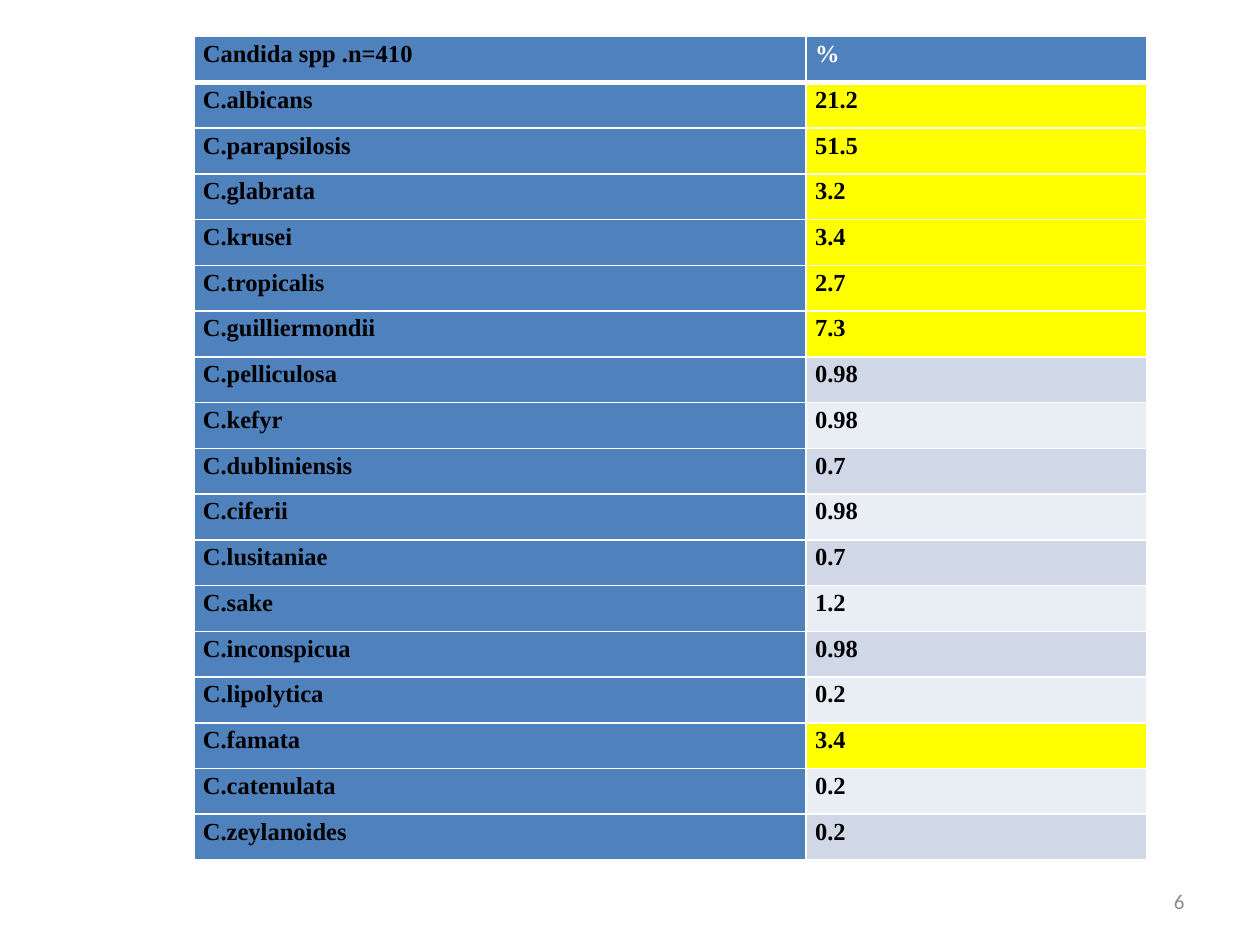
from dataclasses import dataclass

from lxml import etree
from pptx import Presentation
from pptx.dml.color import RGBColor
from pptx.enum.text import MSO_ANCHOR, PP_ALIGN
from pptx.oxml.ns import qn
from pptx.util import Cm, Pt

MIDDLE = MSO_ANCHOR.MIDDLE
RIGHT = PP_ALIGN.RIGHT

# Content
HEADER = ("Candida spp .n=410", "%")
SPECIES = [
    ("C.albicans", "21.2"),
    ("C.parapsilosis", "51.5"),
    ("C.glabrata", "3.2"),
    ("C.krusei", "3.4"),
    ("C.tropicalis", "2.7"),
    ("C.guilliermondii", "7.3"),
    ("C.pelliculosa", "0.98"),
    ("C.kefyr", "0.98"),
    ("C.dubliniensis", "0.7"),
    ("C.ciferii", "0.98"),
    ("C.lusitaniae", "0.7"),
    ("C.sake", "1.2"),
    ("C.inconspicua", "0.98"),
    ("C.lipolytica", "0.2"),
    ("C.famata", "3.4"),
    ("C.catenulata", "0.2"),
    ("C.zeylanoides", "0.2"),
]
PAGE_NUMBER = "6"
HIGHLIGHT_ABOVE = 2  # shares over this percentage are marked


@dataclass(frozen=True)
class Theme:
    table_font: str = "Times New Roman"
    number_font: str = "Calibri"
    table_size: int = 14
    number_size: int = 12
    ink: str = "000000"
    white: str = "FFFFFF"
    gray: str = "8C8C8C"
    blue: str = "4F81BD"
    highlight: str = "FFFF00"
    bands: tuple = ("E9EDF4", "D0D8E8")  # even rows, odd rows
    thin: int = 1
    thick: int = 3


THEME = Theme()

# Layout in centimetres
TABLE_LEFT, TABLE_TOP, TABLE_HEIGHT = 3.91, 0.74, 16.61
COLUMN_WIDTHS = (12.34, 6.86)
CELL_MARGIN = 0.18


def style_text(para, font, size, color, bold=False):
    for span in para.runs:
        span.font.name = font
        span.font.size = Pt(size)
        span.font.bold = bold
        span.font.color.rgb = RGBColor.from_string(color)


def set_borders(cell, widths):
    properties = cell._tc.get_or_add_tcPr()
    for side, width in widths.items():
        line = etree.SubElement(properties, qn(f"a:ln{side}"), w=str(Pt(width)))
        fill = etree.SubElement(line, qn("a:solidFill"))
        etree.SubElement(fill, qn("a:srgbClr"), val=THEME.white)


def cell_fill(row, column, text):
    if row == 0 or column == 0:
        return THEME.blue
    if float(text) > HIGHLIGHT_ABOVE:
        return THEME.highlight
    return THEME.bands[row % 2]


def fill_cell(cell, row, column, text):
    set_borders(cell, {
        "L": THEME.thin,
        "R": THEME.thin,
        "T": THEME.thick if row == 1 else THEME.thin,
        "B": THEME.thick if row == 0 else THEME.thin,
    })
    cell.fill.solid()
    cell.fill.fore_color.rgb = RGBColor.from_string(cell_fill(row, column, text))
    cell.margin_left = cell.margin_right = Cm(CELL_MARGIN)
    cell.margin_top = cell.margin_bottom = 0
    para = cell.text_frame.paragraphs[0]
    para.text = text
    para.line_spacing = 1.15
    color = THEME.white if (row, column) == (0, 1) else THEME.ink
    style_text(para, THEME.table_font, THEME.table_size, color, bold=True)


def add_species_table(page):
    rows = [HEADER] + SPECIES
    table = page.shapes.add_table(
        len(rows), len(HEADER), Cm(TABLE_LEFT), Cm(TABLE_TOP),
        Cm(sum(COLUMN_WIDTHS)), Cm(TABLE_HEIGHT)).table
    for column, width in zip(table.columns, COLUMN_WIDTHS):
        column.width = Cm(width)
    for row, values in enumerate(rows):
        table.rows[row].height = Cm(TABLE_HEIGHT / len(rows))
        for column, text in enumerate(values):
            fill_cell(table.cell(row, column), row, column, text)


def add_page_number(page):
    box = page.shapes.add_textbox(Cm(18.21), Cm(17.65), Cm(5.92), Cm(1.02))
    frame = box.text_frame
    frame.word_wrap = True
    frame.vertical_anchor = MIDDLE
    frame.text = PAGE_NUMBER
    para = frame.paragraphs[0]
    para.alignment = RIGHT
    style_text(para, THEME.number_font, THEME.number_size, THEME.gray)


def main():
    deck = Presentation()
    deck.slide_width, deck.slide_height = Cm(25.4), Cm(19.05)
    page = deck.slides.add_slide(deck.slide_layouts[6])
    add_species_table(page)
    add_page_number(page)
    deck.save("out.pptx")


if __name__ == "__main__":
    main()
